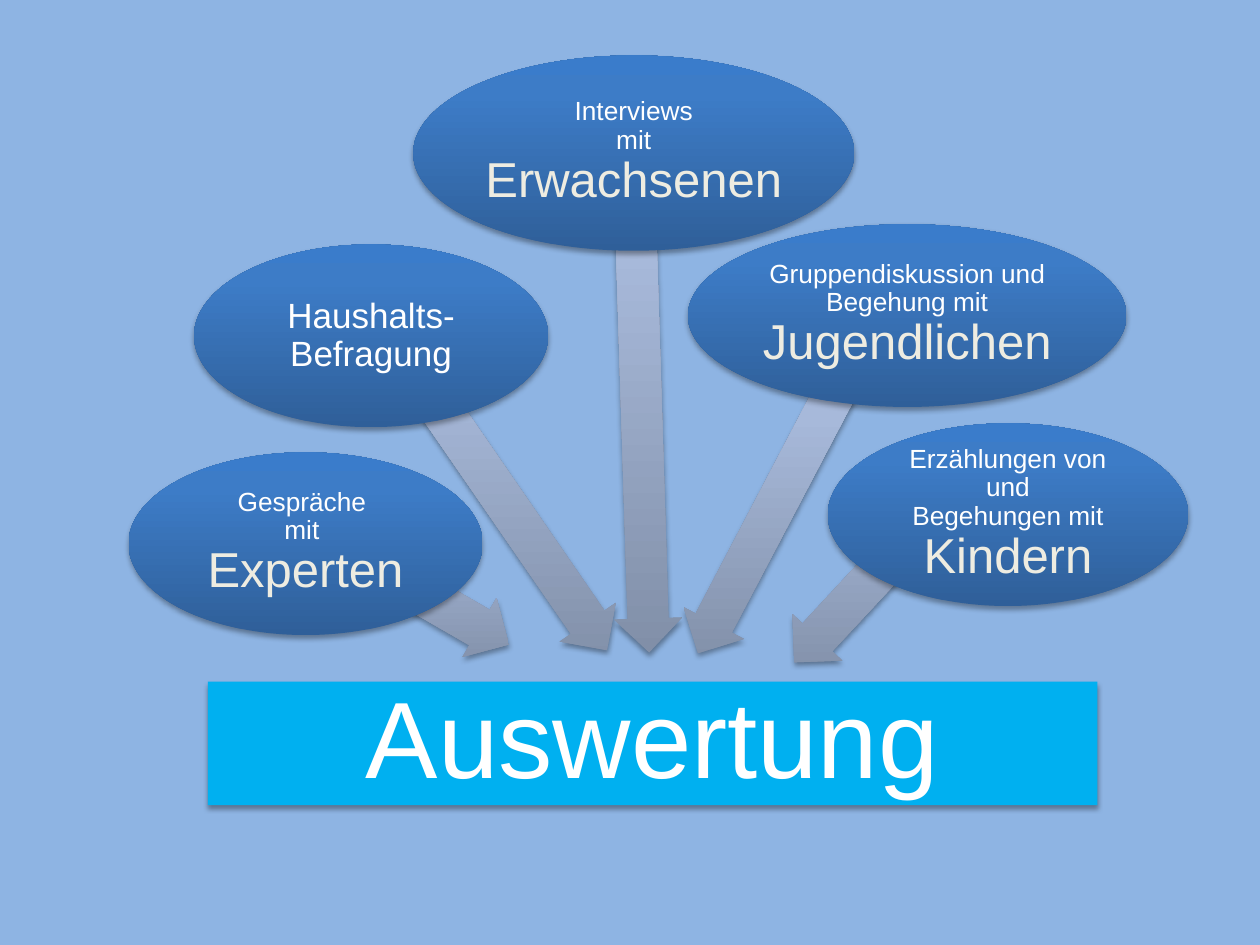
import copy

import lxml.etree
import pptx
import pptx.dml.color
import pptx.enum.shapes
import pptx.enum.text
import pptx.oxml.ns
import pptx.util

Inches = pptx.util.Inches
Shape = pptx.enum.shapes.MSO_SHAPE


def colour(value):
    return pptx.dml.color.RGBColor.from_string(value)


class Diagram:
    font = "Arial"
    white = "FFFFFF"
    cream = "EEECE1"
    ellipse_blues = ("2F5F99", "3D7CC7", "3A7CCB")
    arrow_greys = ("818FA8", "A7B9DA", "A7BADC")
    stops = (0, 0.8, 1)

    def __init__(self, page, background):
        self.page = page
        page.background.fill.solid()
        page.background.fill.fore_color.rgb = colour(background)

    def shape(self, kind, left, top, width, height):
        shape = self.page.shapes.add_shape(
            kind, Inches(left), Inches(top), Inches(width), Inches(height))
        shape.line.fill.background()
        self.cast_shadow(shape)
        return shape

    def cast_shadow(self, shape):
        shape.shadow.inherit = False
        effects = shape._element.spPr.find(pptx.oxml.ns.qn("a:effectLst"))
        shadow = lxml.etree.SubElement(
            effects, pptx.oxml.ns.qn("a:outerShdw"),
            blurRad=str(pptx.util.Pt(3.1)), dist=str(pptx.util.Pt(1.8)),
            dir="5400000", rotWithShape="0")
        black = lxml.etree.SubElement(
            shadow, pptx.oxml.ns.qn("a:srgbClr"), val="000000")
        lxml.etree.SubElement(black, pptx.oxml.ns.qn("a:alpha"), val="35000")

    def shade(self, shape, colours):
        shape.fill.gradient()
        shape.fill.gradient_angle = 90
        gradient = shape._element.spPr.find(pptx.oxml.ns.qn("a:gradFill"))
        gradient.set("rotWithShape", "0")
        stop_list = gradient.find(pptx.oxml.ns.qn("a:gsLst"))
        stop_list.append(copy.deepcopy(stop_list[0]))
        for stop, position, value in zip(
                shape.fill.gradient_stops, self.stops, colours):
            stop.position = position
            stop.color.rgb = colour(value)

    def label(self, shape, lines, size, inset, keyword=None):
        frame = shape.text_frame
        frame.word_wrap = True
        frame.vertical_anchor = pptx.enum.text.MSO_ANCHOR.MIDDLE
        frame.margin_left = frame.margin_right = Inches(inset)
        frame.margin_top = frame.margin_bottom = Inches(inset)
        para = frame.paragraphs[0]
        para.alignment = pptx.enum.text.PP_ALIGN.CENTER
        para.line_spacing = 0.9
        para.font.name = self.font
        para.font.size = pptx.util.Pt(size)
        para.font.color.rgb = colour(self.white)
        for index, line in enumerate(lines):
            if index:
                para.add_line_break()
            para.add_run().text = line
        if keyword:
            para.add_line_break()
            span = para.add_run()
            span.text = keyword
            span.font.size = pptx.util.Pt(28)
            span.font.color.rgb = colour(self.cream)

    def arrow(self, left, top, length, angle):
        arrow = self.shape(Shape.LEFT_ARROW, left, top, length, 0.54)
        arrow.rotation = angle
        arrow.adjustments[0] = 0.6
        arrow.adjustments[1] = 0.5
        self.shade(arrow, self.arrow_greys)

    def ellipse(self, place, lines, keyword):
        ellipse = self.shape(Shape.OVAL, *place)
        self.shade(ellipse, self.ellipse_blues)
        if keyword:
            self.label(ellipse, lines, 15, 0.03, keyword)
        else:
            self.label(ellipse, lines, 20, 0.04)

    def result(self, place, text, fill):
        box = self.shape(Shape.RECTANGLE, *place)
        box.fill.solid()
        box.fill.fore_color.rgb = colour(fill)
        self.label(box, [text], 62, 0.04)


SOURCES = [
    ((2.08, 4.32, 2.1, 210), (1.02, 3.59, 2.81, 1.45),
     ["Gespräche ", "mit "], "Experten"),
    ((2.34, 3.59, 3.16, 235.4), (1.54, 1.94, 2.81, 1.45),
     ["Haushalts-Befragung"], None),
    ((3.11, 2.93, 3.96, 268.2), (3.28, 0.44, 3.5, 1.55),
     ["Interviews", "mit"], "Erwachsenen"),
    ((4.86, 3.79, 2.54, 297.7), (5.46, 1.78, 3.48, 1.45),
     ["Gruppendiskussion und Begehung mit"], "Jugendlichen"),
    ((5.93, 4.13, 2.34, 312.9), (6.57, 3.36, 2.86, 1.45),
     ["Erzählungen von und", "Begehungen mit"], "Kindern"),
]


def main():
    deck = pptx.Presentation()
    deck.slide_width = Inches(10)
    deck.slide_height = Inches(7.5)
    diagram = Diagram(deck.slides.add_slide(deck.slide_layouts[6]), "8EB4E3")
    diagram.result((1.65, 5.41, 7.06, 0.98), "Auswertung", "00B0F0")
    for arrow, place, lines, keyword in SOURCES:
        diagram.arrow(*arrow)
        diagram.ellipse(place, lines, keyword)
    deck.save("out.pptx")


if __name__ == "__main__":
    main()
